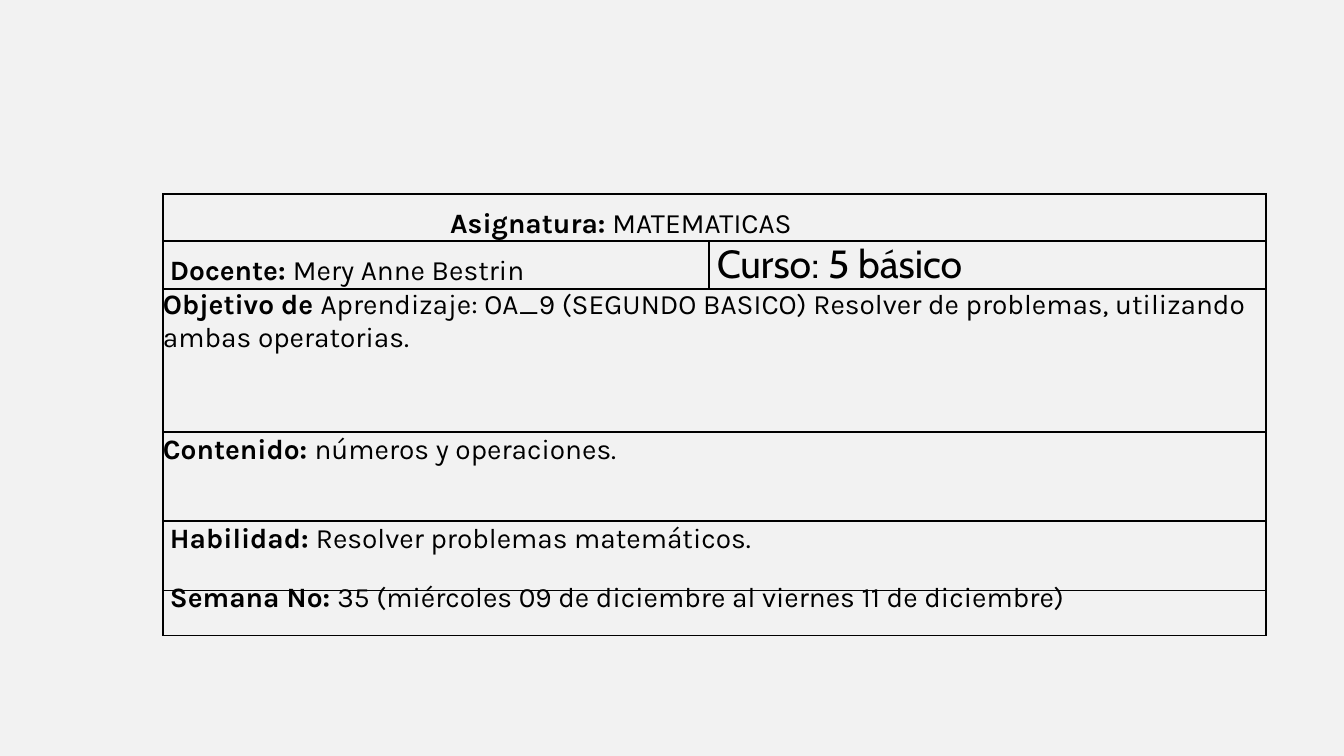
from lxml import etree
from pptx import Presentation
from pptx.dml.color import RGBColor
from pptx.enum.text import PP_ALIGN
from pptx.oxml.ns import qn
from pptx.util import Pt

SCALE = 12192000 / 1344
BLACK = RGBColor(0x00, 0x00, 0x00)
GRAY = RGBColor(0xF2, 0xF2, 0xF2)
LEFT = PP_ALIGN.LEFT
CENTER = PP_ALIGN.CENTER
TIGHT = Pt(16.9)
LOOSE = 1.05


def px(num):
    """Turn pixels into EMU."""
    return round(num * SCALE)


class Sheet:
    """Hold the style and the current slide."""

    def __init__(self, deck):
        """Add a blank slide with a plain background."""
        self.font = "Karla"
        self.size = 20
        self.slide = deck.slides.add_slide(deck.slide_layouts[6])
        fill = self.slide.background.fill
        fill.solid()
        fill.fore_color.rgb = GRAY

    def border(self, cell):
        """Draw a thin line on each side of a cell."""
        props = cell._tc.get_or_add_tcPr()
        for side in ("a:lnL", "a:lnR", "a:lnT", "a:lnB"):
            line = etree.SubElement(props, qn(side), w=str(Pt(1)))
            fill = etree.SubElement(line, qn("a:solidFill"))
            etree.SubElement(fill, qn("a:srgbClr"), val=str(BLACK))

    def table(self, left, top, cols, rows):
        """Add a bordered table without fill."""
        frame = self.slide.shapes.add_table(
            len(rows), len(cols), px(left), px(top), px(sum(cols)), px(sum(rows)))
        grid = frame.table
        grid.first_row = grid.horz_banding = False
        for col, width in zip(grid.columns, cols):
            col.width = px(width)
        for row, height in zip(grid.rows, rows):
            row.height = px(height)
        for cell in grid.iter_cells():
            self.border(cell)
            cell.fill.background()
            cell.margin_left = cell.margin_right = 0
            cell.margin_top = cell.margin_bottom = 0
        return grid

    def label(self, cell, head, text, left=0, top=0, right=0,
              space=None, align=LEFT, font=None, size=None):
        """Fill a cell with a bold head and plain text."""
        cell.margin_left, cell.margin_top = px(left), px(top)
        cell.margin_right = px(right)
        para = cell.text_frame.paragraphs[0]
        para.alignment = align
        para.line_spacing = space
        for part, bold in ((head, True), (text, False)):
            if part:
                run = para.add_run()
                run.text = part
                run.font.name = font or self.font
                run.font.size = Pt(size or self.size)
                run.font.bold = bold
                run.font.color.rgb = BLACK


def main():
    """Build the lesson slide."""
    deck = Presentation()
    deck.slide_width, deck.slide_height = px(1344), px(756)
    sheet = Sheet(deck)
    grid = sheet.table(163, 194, (546, 557), (47, 48, 143, 89, 70, 45))
    lines = (
        ("Asignatura:", " MATEMATICAS",
         dict(top=23, right=187, space=TIGHT, align=CENTER)),
        ("Docente: ", "Mery Anne Bestrin", dict(left=7, top=23, space=TIGHT)),
        ("Objetivo de ", "Aprendizaje: OA_9 (SEGUNDO BASICO) Resolver de "
         "problemas, utilizando ambas operatorias.", {}),
        ("Contenido: ", "números y operaciones.", dict(space=LOOSE)),
        ("Habilidad: ", "Resolver problemas matemáticos.",
         dict(left=7, space=LOOSE)),
        ("Semana Nº: ", "35 (miércoles 09 de diciembre al viernes 11 de diciembre)",
         dict(left=7, space=TIGHT)),
    )
    for row, (head, text, style) in enumerate(lines):
        cell = grid.cell(row, 0)
        if row != 1:
            cell.merge(grid.cell(row, 1))
        sheet.label(cell, head, text, **style)
    sheet.label(grid.cell(1, 1), "", "Curso: 5 básico", left=8, font="Cabin", size=28)
    deck.save("out.pptx")


if __name__ == "__main__":
    main()
